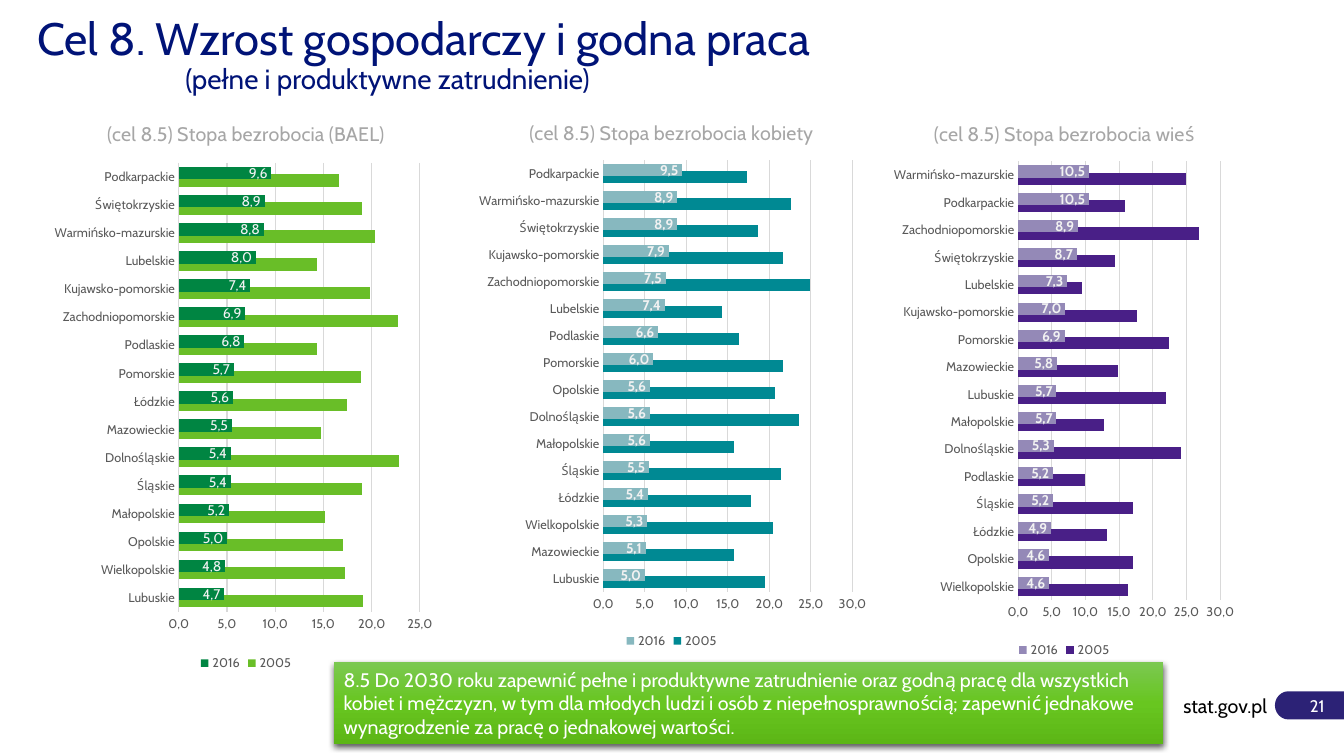
from pptx import Presentation
from pptx import util as u
from pptx.chart.data import CategoryChartData
from pptx.dml.color import RGBColor
from pptx.enum import chart as ch, shapes, text
from pptx.oxml import parse_xml
from pptx.oxml.ns import nsdecls

WHITE = RGBColor(0xFF, 0xFF, 0xFF)
BLACK = RGBColor(0, 0, 0)
TITLE_BLUE = RGBColor(0x00, 0x13, 0x77)
BADGE_BLUE = RGBColor(0x2C, 0x22, 0x76)
HEADING_GREY = RGBColor(0xA6, 0xA6, 0xA6)
AXIS_GREY = RGBColor(0x59, 0x59, 0x59)
GRID_GREY = RGBColor(0xD9, 0xD9, 0xD9)
LABEL_GREY = RGBColor(0xF2, 0xF2, 0xF2)
NUMBER_FORMAT = "[$-10415]0.0"

UNEMPLOYMENT = [
    dict(
        heading="(cel 8.5) Stopa bezrobocia (BAEL)",
        at=(1.22, 2.51, 9.96, 14.5), plot=(0.33, 0.11, 0.61, 0.78),
        top=25, bold=False,
        colors=(RGBColor(0x69, 0xBE, 0x28), RGBColor(0x00, 0x85, 0x42)),
        regions=["Lubuskie", "Wielkopolskie", "Opolskie", "Małopolskie", "Śląskie",
                 "Dolnośląskie", "Mazowieckie", "Łódzkie", "Pomorskie", "Podlaskie",
                 "Zachodniopomorskie", "Kujawsko-pomorskie", "Lubelskie",
                 "Warmińsko-mazurskie", "Świętokrzyskie", "Podkarpackie"],
        rates={"2005": [19.1, 17.2, 17, 15.2, 19, 22.8, 14.8, 17.4,
                        18.9, 14.3, 22.7, 19.8, 14.3, 20.4, 19, 16.6],
               "2016": [4.7, 4.8, 5, 5.2, 5.4, 5.4, 5.5, 5.6,
                        5.7, 6.8, 6.9, 7.4, 8, 8.8, 8.9, 9.6]}),
    dict(
        heading="(cel 8.5) Stopa bezrobocia kobiety",
        at=(11.86, 2.51, 10.13, 13.94), plot=(0.33, 0.11, 0.62, 0.78),
        top=30, bold=True,
        colors=(RGBColor(0x00, 0x89, 0x93), RGBColor(0x87, 0xB8, 0xBF)),
        regions=["Lubuskie", "Mazowieckie", "Wielkopolskie", "Łódzkie", "Śląskie",
                 "Małopolskie", "Dolnośląskie", "Opolskie", "Pomorskie", "Podlaskie",
                 "Lubelskie", "Zachodniopomorskie", "Kujawsko-pomorskie",
                 "Świętokrzyskie", "Warmińsko-mazurskie", "Podkarpackie"],
        rates={"2005": [19.5, 15.7, 20.4, 17.8, 21.4, 15.7, 23.6, 20.7,
                        21.6, 16.4, 14.3, 24.9, 21.6, 18.6, 22.6, 17.3],
               "2016": [5, 5.1, 5.3, 5.4, 5.5, 5.6, 5.6, 5.6,
                        6, 6.6, 7.4, 7.5, 7.9, 8.9, 8.9, 9.5]}),
    dict(
        heading="(cel 8.5) Stopa bezrobocia wieś",
        at=(22.35, 2.51, 8.94, 14.17), plot=(0.37, 0.11, 0.57, 0.78),
        top=30, bold=True,
        colors=(RGBColor(0x49, 0x1F, 0x87), RGBColor(0x94, 0x89, 0xB7)),
        regions=["Wielkopolskie", "Opolskie", "Łódzkie", "Śląskie", "Podlaskie",
                 "Dolnośląskie", "Małopolskie", "Lubuskie", "Mazowieckie", "Pomorskie",
                 "Kujawsko-pomorskie", "Lubelskie", "Świętokrzyskie",
                 "Zachodniopomorskie", "Podkarpackie", "Warmińsko-mazurskie"],
        rates={"2005": [16.3, 17, 13.2, 17, 9.9, 24.2, 12.8, 22,
                        14.9, 22.4, 17.6, 9.5, 14.4, 26.8, 15.9, 24.9],
               "2016": [4.6, 4.6, 4.9, 5.2, 5.2, 5.3, 5.7, 5.7,
                        5.8, 6.9, 7, 7.3, 8.7, 8.9, 10.5, 10.5]}),
]


def cm(lengths):
    return [u.Cm(length) for length in lengths]


def assign(target, **values):
    for name, value in values.items():
        setattr(target, name, value)


class Deck:
    font_name = "Cabin"

    def __init__(self):
        self.deck = Presentation()
        assign(self.deck, slide_width=u.Cm(33.87), slide_height=u.Cm(19.05))
        self.slide = self.deck.slides.add_slide(self.deck.slide_layouts[5])

    def style(self, font, size, color, bold=False):
        assign(font, name=self.font_name, size=u.Pt(size), bold=bold)
        font.color.rgb = color

    def fill_text(self, frame, words, size, color, align, anchor, insets):
        sides = ("margin_left", "margin_top", "margin_right", "margin_bottom")
        assign(frame, word_wrap=True, vertical_anchor=anchor, **dict(zip(sides, cm(insets))))
        paragraph = frame.paragraphs[0]
        paragraph.alignment = align
        run = paragraph.add_run()
        run.text = words
        self.style(run.font, size, color)
        return paragraph

    def title(self, at, heading, subheading):
        title = self.slide.shapes.title
        assign(title, **dict(zip(("left", "top", "width", "height"), cm(at))))
        title.text_frame.auto_size = text.MSO_AUTO_SIZE.NONE
        paragraph = self.fill_text(title.text_frame, heading, 32.4, TITLE_BLUE,
                                   text.PP_ALIGN.LEFT, text.MSO_ANCHOR.BOTTOM, (0, 0.13, 0, 0.13))
        paragraph.line_spacing = 0.9
        hanging = u.Cm(3.73)
        properties = paragraph._p.get_or_add_pPr()
        properties.set("marL", str(hanging))
        properties.set("indent", str(-hanging))
        paragraph.add_line_break()
        run = paragraph.add_run()
        run.text = subheading
        self.style(run.font, 19.8, TITLE_BLUE)

    def label(self, at, words):
        box = self.slide.shapes.add_textbox(*cm(at))
        self.fill_text(box.text_frame, words, 14, BLACK, text.PP_ALIGN.RIGHT,
                       text.MSO_ANCHOR.MIDDLE, (0, 0.13, 0, 0.13))

    def panel(self, kind, at, words, size, align, anchor, insets):
        panel = self.slide.shapes.add_shape(kind, *cm(at))
        panel.shadow.inherit = False
        panel.line.fill.background()
        self.fill_text(panel.text_frame, words, size, WHITE, align, anchor, insets)
        return panel

    def badge(self, at, words):
        badge = self.panel(shapes.MSO_SHAPE.FLOWCHART_TERMINATOR, at, words, 12,
                           text.PP_ALIGN.RIGHT, text.MSO_ANCHOR.MIDDLE, (0.1, 0.13, 0.76, 0.13))
        badge.fill.solid()
        badge.fill.fore_color.rgb = BADGE_BLUE

    def goal(self, at, words, gradient):
        goal = self.panel(shapes.MSO_SHAPE.RECTANGLE, at, words, 14,
                          text.PP_ALIGN.LEFT, text.MSO_ANCHOR.TOP, (0.25, 0.13, 0.25, 0.13))
        stops = "".join(f'<a:gs pos="{position * 1000}"><a:srgbClr val="{color}"/></a:gs>'
                        for position, color in gradient)
        properties = goal._element.spPr
        properties.prstGeom.addnext(parse_xml(
            f'<a:gradFill {nsdecls("a")} rotWithShape="1"><a:gsLst>{stops}</a:gsLst>'
            '<a:lin ang="5400000" scaled="0"/></a:gradFill>'))
        properties.find("{*}effectLst").append(parse_xml(
            f'<a:outerShdw {nsdecls("a")} blurRad="{u.Pt(4.5)}" dist="{u.Pt(1.5)}" '
            'dir="5400000" algn="ctr" rotWithShape="0"><a:srgbClr val="000000">'
            '<a:alpha val="63000"/></a:srgbClr></a:outerShdw>'))

    def place_plot(self, chart, plot):
        area = chart._chartSpace.chart.plotArea
        for layout in area.findall("{*}layout"):
            area.remove(layout)
        sizes = "".join(f'<c:{side} val="{share}"/>' for side, share in zip("xywh", plot))
        area.insert(0, parse_xml(
            f'<c:layout {nsdecls("c")}><c:manualLayout><c:layoutTarget val="inner"/>'
            f'<c:xMode val="edge"/><c:yMode val="edge"/>{sizes}</c:manualLayout></c:layout>'))
        chart._chartSpace.chart.addnext(parse_xml(
            f'<c:spPr {nsdecls("c", "a")}><a:solidFill><a:srgbClr val="{WHITE}"/></a:solidFill>'
            '<a:ln><a:noFill/></a:ln></c:spPr>'))

    def bars(self, heading, at, plot, top, bold, colors, regions, rates):
        data = CategoryChartData(number_format=NUMBER_FORMAT)
        data.categories = regions
        for year, values in rates.items():
            data.add_series(year, values)
        chart = self.slide.shapes.add_chart(ch.XL_CHART_TYPE.BAR_CLUSTERED, *cm(at), data).chart
        self.style(chart.font, 10, BLACK)
        run = chart.chart_title.text_frame.paragraphs[0].add_run()
        run.text = heading
        self.style(run.font, 14, HEADING_GREY)
        chart.chart_title.include_in_layout = False
        chart.has_legend = True
        assign(chart.legend, position=ch.XL_LEGEND_POSITION.BOTTOM, include_in_layout=False)
        self.style(chart.legend.font, 9, AXIS_GREY)
        for axis in (chart.category_axis, chart.value_axis):
            assign(axis, major_tick_mark=ch.XL_TICK_MARK.NONE, minor_tick_mark=ch.XL_TICK_MARK.NONE)
            self.style(axis.tick_labels.font, 9, AXIS_GREY)
        assign(chart.value_axis, minimum_scale=0, maximum_scale=top, major_unit=5)
        assign(chart.value_axis.tick_labels, number_format=NUMBER_FORMAT, number_format_is_linked=False)
        chart.value_axis.format.line.fill.background()
        for line in (chart.category_axis.format.line, chart.value_axis.major_gridlines.format.line):
            line.color.rgb = GRID_GREY
            line.width = u.Pt(0.75)
        bars = chart.plots[0]
        assign(bars, gap_width=66, overlap=41, vary_by_categories=False)
        for series, color in zip(bars.series, colors):
            series.format.fill.solid()
            series.format.fill.fore_color.rgb = color
        labels = bars.series[1].data_labels
        assign(labels, show_value=True, position=ch.XL_LABEL_POSITION.INSIDE_END,
               number_format=NUMBER_FORMAT, number_format_is_linked=False)
        self.style(labels.font, 10, LABEL_GREY, bold)
        self.place_plot(chart, plot)


def main():
    page = Deck()
    page.badge((32.13, 17.42, 2.11, 0.71), "21")
    page.label((29.44, 17.35, 2.49, 0.86), "stat.gov.pl")
    page.title((0.94, 0.53, 32, 2.01), "Cel 8. Wzrost gospodarczy i godna praca",
               "(pełne i produktywne zatrudnienie)")
    for rates in UNEMPLOYMENT:
        page.bars(**rates)
    page.goal((8.41, 16.69, 20.9, 2.06),
              "8.5 Do 2030 roku zapewnić pełne i produktywne zatrudnienie oraz godną pracę dla "
              "wszystkich kobiet i mężczyzn, w tym dla młodych ludzi i osób z niepełnosprawnością; "
              "zapewnić jednakowe wynagrodzenie za pracę o jednakowej wartości.",
              [(0, "7BC851"), (50, "68C620"), (100, "5CB616")])
    page.deck.save("out.pptx")


if __name__ == "__main__":
    main()
